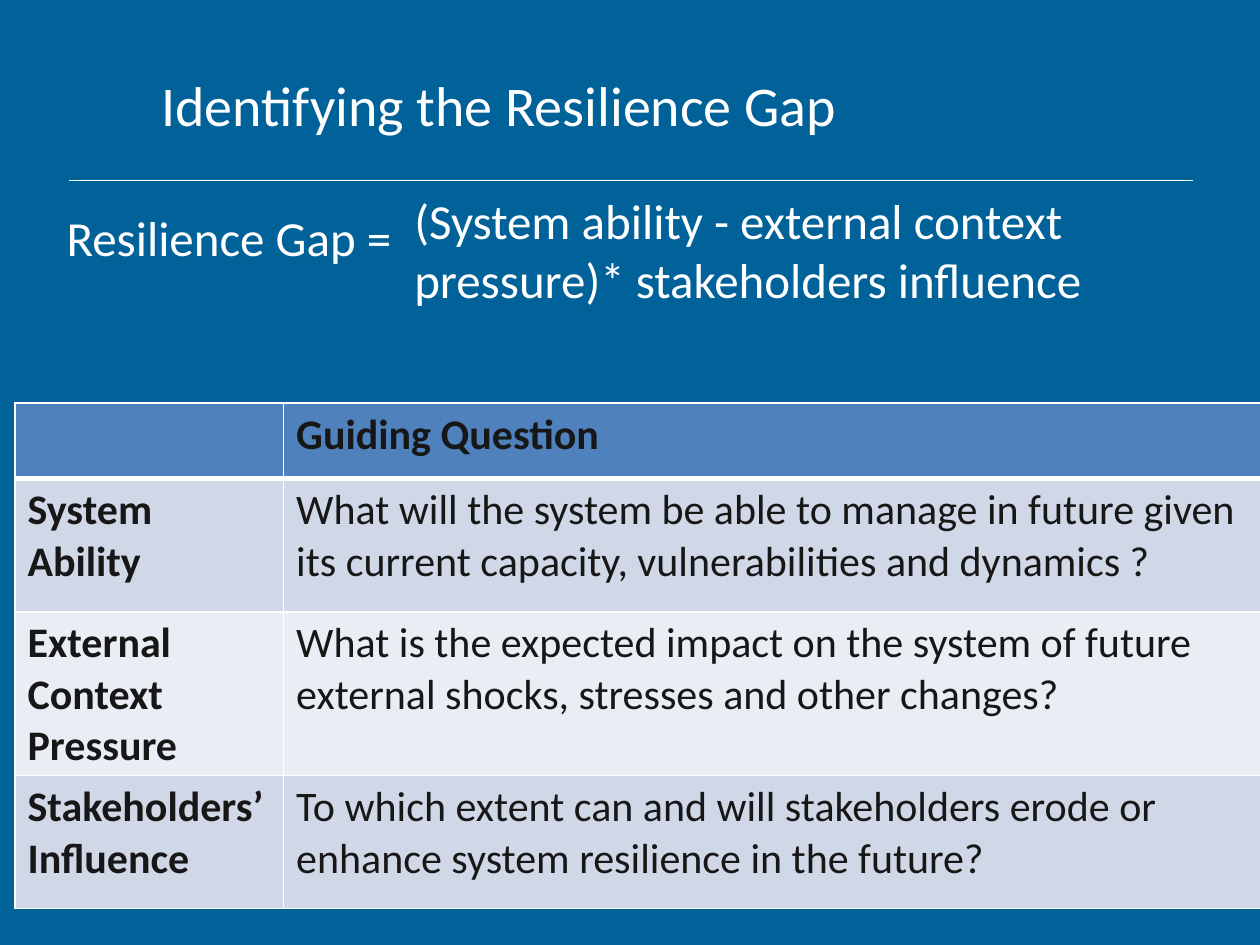
"""Builds the resilience gap slide: title, formula and guiding questions."""
from dataclasses import dataclass

from lxml.etree import SubElement
from pptx import Presentation
from pptx.dml.color import RGBColor as RGB
from pptx.enum.shapes import MSO_CONNECTOR as LINK
from pptx.enum.text import MSO_ANCHOR as ANCHOR, MSO_AUTO_SIZE as FIT, PP_ALIGN as ALIGN
from pptx.oxml.ns import qn
from pptx.util import Pt


@dataclass(frozen=True)
class Theme:
    font: str = "Calibri"
    back: str = "006299"
    white: str = "FFFFFF"
    ink: str = "171717"
    head: str = "4F81BD"
    bands: tuple = ("D0D8E8", "E9EDF4")
    title: int = 32
    lead: int = 28
    cell: int = 24


LOOK = Theme()
ROWS = [
    ("", "Guiding Question"),
    ("System Ability",
     "What will the system be able to manage in future given its current "
     "capacity, vulnerabilities and dynamics ?"),
    ("External Context Pressure",
     "What is the expected impact on the system of future external shocks, "
     "stresses and other changes?"),
    ("Stakeholders’ Influence",
     "To which extent can and will stakeholders erode or enhance system "
     "resilience in the future?"),
]
WIDTHS = (153.5, 558.9)
HEIGHTS = (43.2, 76, 88, 76)


def write(frame, text, size, color, bold=False):
    para = frame.paragraphs[0]
    para.alignment = ALIGN.LEFT
    run = para.add_run()
    run.text = text
    font = run.font
    font.name, font.size, font.bold = LOOK.font, Pt(size), bold
    font.color.rgb = RGB.from_string(color)


def add_title(slide, text, box):
    title = slide.shapes.title
    title.left, title.top, title.width, title.height = map(Pt, box)
    frame = title.text_frame
    frame.auto_size = FIT.NONE
    frame.vertical_anchor = ANCHOR.MIDDLE
    write(frame, text, LOOK.title, LOOK.white)


def add_text(slide, text, box):
    frame = slide.shapes.add_textbox(*map(Pt, box)).text_frame
    frame.word_wrap = True
    frame.auto_size = FIT.SHAPE_TO_FIT_TEXT
    write(frame, text, LOOK.lead, LOOK.white)


def add_rule(slide, left, top, width):
    ends = map(Pt, (left, top, left + width, top))
    rule = slide.shapes.add_connector(LINK.STRAIGHT, *ends)
    rule.line.width = Pt(0.5)
    rule.line.color.rgb = RGB.from_string(LOOK.white)
    SubElement(rule._element.spPr, qn("a:effectLst"))


def edge(cell, side, width):
    props = cell._tc.get_or_add_tcPr()
    line = SubElement(props, qn(f"a:ln{side}"), w=str(Pt(width)))
    fill = SubElement(line, qn("a:solidFill"))
    SubElement(fill, qn("a:srgbClr"), val=LOOK.white)


def style(cell, row):
    thick = {"T": 3 if row == 1 else 1, "B": 3 if row == 0 else 1}
    for side in "LRTB":
        edge(cell, side, thick.get(side, 1))
    color = LOOK.bands[(row - 1) % 2] if row else LOOK.head
    cell.fill.solid()
    cell.fill.fore_color.rgb = RGB.from_string(color)


def add_grid(slide, left, top):
    box = map(Pt, (left, top, sum(WIDTHS), sum(HEIGHTS)))
    grid = slide.shapes.add_table(len(ROWS), len(WIDTHS), *box).table
    for col, width in zip(grid.columns, WIDTHS):
        col.width = Pt(width)
    for row, (line, height) in enumerate(zip(ROWS, HEIGHTS)):
        grid.rows[row].height = Pt(height)
        for col, text in enumerate(line):
            cell = grid.cell(row, col)
            style(cell, row)
            if text:
                bold = row == 0 or col == 0
                write(cell.text_frame, text, LOOK.cell, LOOK.ink, bold)


def main():
    deck = Presentation()
    deck.slide_width, deck.slide_height = Pt(720), Pt(540)
    slide = deck.slides.add_slide(deck.slide_layouts[5])
    back = slide.background.fill
    back.solid()
    back.fore_color.rgb = RGB.from_string(LOOK.back)
    add_rule(slide, 39.5, 103, 642)
    add_title(slide, "Identifying the Resilience Gap", (85, 19, 584, 80.5))
    add_text(slide, "Resilience Gap =", (31, 115.3, 204, 41))
    add_text(slide, "(System ability - external context pressure)* "
             "stakeholders influence", (229.7, 105.5, 490, 75))
    add_grid(slide, 8.6, 230.4)
    deck.save("out.pptx")


if __name__ == "__main__":
    main()
